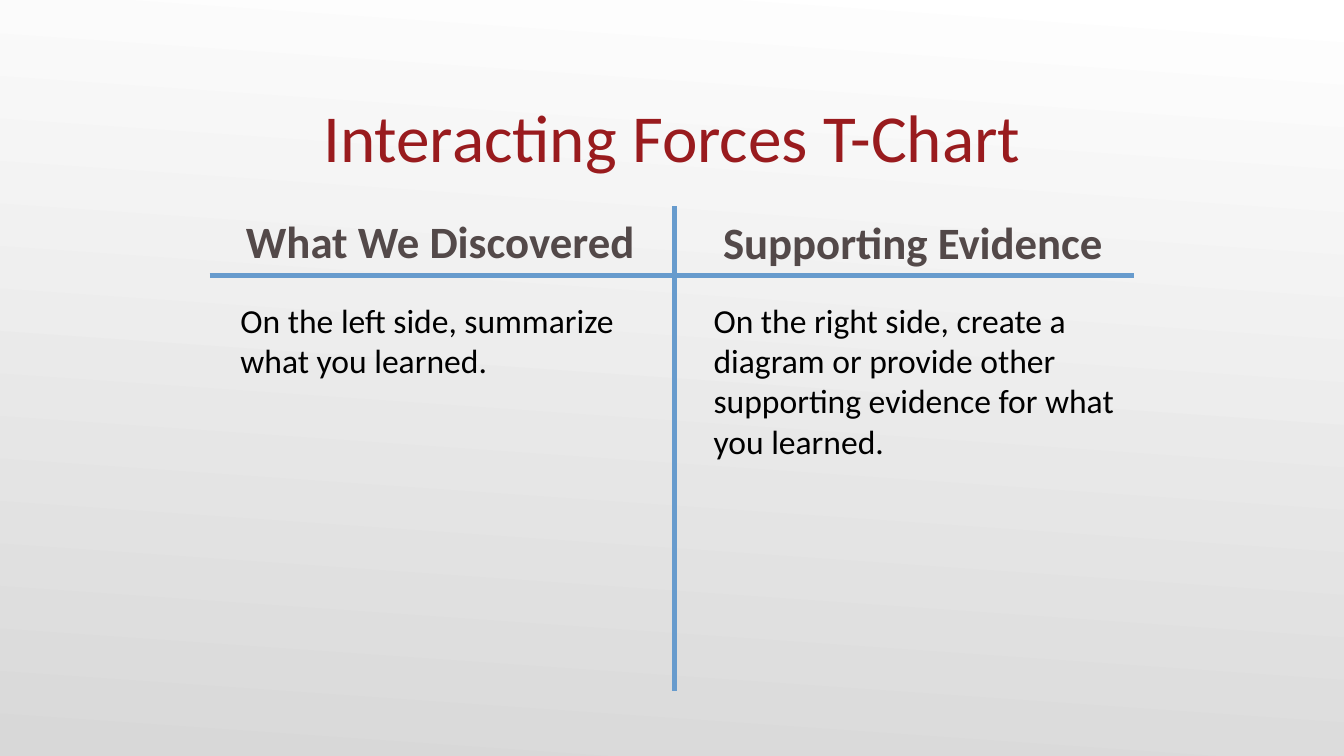
import pptx
import pptx.util
import pptx.dml.color
import pptx.enum.shapes
import pptx.enum.text
import pptx.oxml.ns
import lxml.etree

Inches = pptx.util.Inches
ALIGN = pptx.enum.text.PP_ALIGN
ANCHOR = pptx.enum.text.MSO_ANCHOR

# Content: heading, heading box, heading alignment, body, body left
TITLE = "Interacting Forces T-Chart"
SIDES = [
    ("What We Discovered", (1.34, 1.52, 3.62, 0.54), ALIGN.CENTER,
     "On the left side, summarize what you learned.", 1.56),
    ("Supporting Evidence", (5.08, 1.53, 3.36, 0.54), ALIGN.LEFT,
     "On the right side, create a diagram or provide other "
     "supporting evidence for what you learned.", 5.08),
]
BAR = (1.56, 2.05, 8.44, 2.05)
STEM = (5.02, 5.14, 5.02, 1.53)

THEME = {
    "font": "Calibri",
    "back": ("FFFFFF", "D8D8D8"),
    "line": "679BCD",
    "title": (36, "991B1E", False),
    "head": (24, "534949", True),
    "body": (18, "000000", False),
}


def tint(code):
    return pptx.dml.color.RGBColor.from_string(code)


def write(text, area, style, align, anchor, inset):
    box = slide.shapes.add_textbox(*map(Inches, area))
    frame = box.text_frame
    frame.word_wrap = True
    frame.vertical_anchor = anchor
    (frame.margin_left, frame.margin_top,
     frame.margin_right, frame.margin_bottom) = map(Inches, inset)
    para = frame.paragraphs[0]
    para.text = text
    para.alignment = align
    size, color, bold = THEME[style]
    para.font.name = THEME["font"]
    para.font.size = pptx.util.Pt(size)
    para.font.bold = bold
    para.font.color.rgb = tint(color)


def rule(ends):
    line = slide.shapes.add_connector(
        pptx.enum.shapes.MSO_CONNECTOR.STRAIGHT, *map(Inches, ends))
    line.line.color.rgb = tint(THEME["line"])
    line.line.width = pptx.util.Pt(3)
    lxml.etree.SubElement(line._element.spPr, pptx.oxml.ns.qn("a:effectLst"))


# Widescreen slide, 16 by 9
deck = pptx.Presentation()
deck.slide_width = Inches(10)
deck.slide_height = deck.slide_width * 9 // 16
slide = deck.slides.add_slide(deck.slide_layouts[6])

# Background gradient
fill = slide.background.fill
fill.gradient()
fill.gradient_angle = 266
for stop, color in zip(fill.gradient_stops, THEME["back"]):
    stop.color.rgb = tint(color)

# Title, T-shaped rules and the two sides
rule(BAR)
write(TITLE, (0.5, 0.58, 9, 0.73), "title", ALIGN.CENTER, ANCHOR.BOTTOM,
      (0, 0.05, 0, 0))
for head, area, align, body, left in SIDES:
    write(head, area, "head", align, ANCHOR.MIDDLE, (0.3, 0, 0.05, 0))
    write(body, (left, 2.23, 3.36, 2.98), "body", ALIGN.LEFT, ANCHOR.TOP,
          (0.23, 0, 0.1, 0.05))
rule(STEM)

deck.save("out.pptx")
